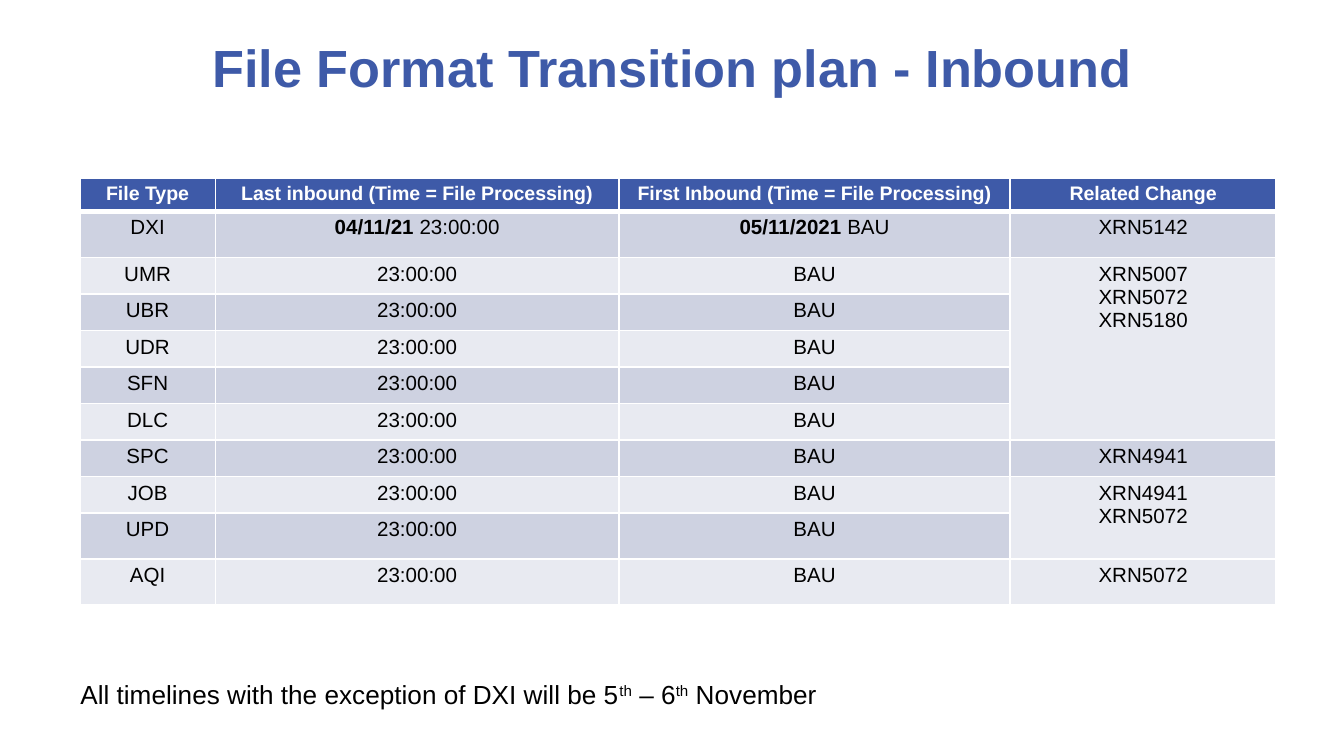
from dataclasses import dataclass

from lxml.etree import SubElement
from pptx import Presentation
from pptx.dml.color import RGBColor as Rgb
from pptx.enum.text import MSO_ANCHOR as Anchor, MSO_AUTO_SIZE as AutoSize, PP_ALIGN as Align
from pptx.oxml.ns import qn
from pptx.util import Cm, Pt


@dataclass(frozen=True)
class Theme:
    font: str = "Arial"
    blue: str = "3E5AA8"
    odd_row: str = "CED2E1"
    even_row: str = "E8EAF1"
    white: str = "FFFFFF"
    black: str = "000000"
    title_size: float = 28
    header_size: float = 10.5
    cell_size: float = 11
    note_size: float = 14


theme = Theme()


def write(frame, *paragraphs, size, color=theme.black, align=Align.CENTER, bold=False):
    for index, runs in enumerate(paragraphs):
        paragraph = frame.paragraphs[0] if index == 0 else frame.add_paragraph()
        paragraph.alignment = align
        for text, style in [(runs, "")] if isinstance(runs, str) else runs:
            run = paragraph.add_run()
            run.text = text
            run.font.name = theme.font
            run.font.size = Pt(size)
            run.font.bold = bold or style == "bold"
            run.font.color.rgb = Rgb.from_string(color)
            if style == "super":
                run._r.get_or_add_rPr().set("baseline", "30000")


def paint(cell, fill, bottom_width=1):
    properties = cell._tc.get_or_add_tcPr()
    for side, width in (("L", 1), ("R", 1), ("T", 1), ("B", bottom_width)):
        border = SubElement(properties, qn(f"a:ln{side}"), w=str(Pt(width)))
        SubElement(SubElement(border, qn("a:solidFill")), qn("a:srgbClr"), val=theme.white)
    cell.fill.solid()
    cell.fill.fore_color.rgb = Rgb.from_string(fill)
    cell.margin_top = cell.margin_bottom = Cm(0.1)


deck = Presentation()
deck.slide_width, deck.slide_height = Cm(25.4), Cm(14.29)
slide = deck.slides.add_slide(deck.slide_layouts[5])

title = slide.shapes.title
title.left, title.top, title.width, title.height = Cm(1.27), Cm(0.36), Cm(22.86), Cm(1.78)
title.text_frame.vertical_anchor = Anchor.MIDDLE
write(title.text_frame, "File Format Transition plan - Inbound",
      size=theme.title_size, color=theme.blue, bold=True)

headings = ["File Type", "Last inbound (Time = File Processing)",
            "First Inbound (Time = File Processing)", "Related Change"]
file_types = ["DXI", "UMR", "UBR", "UDR", "SFN", "DLC", "SPC", "JOB", "UPD", "AQI"]
last_inbound = {"DXI": [("04/11/21 ", "bold"), ("23:00:00", "")]}
first_inbound = {"DXI": [("05/11/2021", "bold"), (" BAU", "")]}
related_changes = {
    "DXI": (1, ["XRN5142"]),
    "UMR": (5, ["XRN5007", "XRN5072", "XRN5180"]),
    "SPC": (1, ["XRN4941"]),
    "JOB": (2, ["XRN4941", "XRN5072"]),
    "AQI": (1, ["XRN5072"]),
}
column_widths = [2.56, 7.63, 7.39, 5.03]
row_heights = [0.63, 0.88] + [0.69] * 7 + [0.87] * 2

plan = slide.shapes.add_table(len(row_heights), len(column_widths), Cm(1.51), Cm(3.36),
                              Cm(sum(column_widths)), Cm(sum(row_heights))).table
for column, width in zip(plan.columns, column_widths):
    column.width = Cm(width)
for row, height in zip(plan.rows, row_heights):
    row.height = Cm(height)

for column, heading in enumerate(headings):
    paint(plan.cell(0, column), theme.blue, bottom_width=3)
    write(plan.cell(0, column).text_frame, heading,
          size=theme.header_size, color=theme.white, bold=True)

for row, file_type in enumerate(file_types, start=1):
    for column in range(len(headings)):
        paint(plan.cell(row, column), theme.odd_row if row % 2 else theme.even_row)
    times = [file_type, last_inbound.get(file_type, "23:00:00"), first_inbound.get(file_type, "BAU")]
    for column, entry in enumerate(times):
        write(plan.cell(row, column).text_frame, entry, size=theme.cell_size)
    if file_type in related_changes:
        span, changes = related_changes[file_type]
        if span > 1:
            plan.cell(row, 3).merge(plan.cell(row + span - 1, 3))
        write(plan.cell(row, 3).text_frame, *changes, size=theme.cell_size)

note = slide.shapes.add_textbox(Cm(1.27), Cm(12.7), Cm(22.2), Cm(0.86)).text_frame
note.word_wrap = True
note.auto_size = AutoSize.SHAPE_TO_FIT_TEXT
write(note, [("All timelines with the exception of DXI will be 5", ""), ("th", "super"),
             (" – 6", ""), ("th", "super"), (" November", "")],
      size=theme.note_size, align=Align.LEFT)

deck.save("out.pptx")
